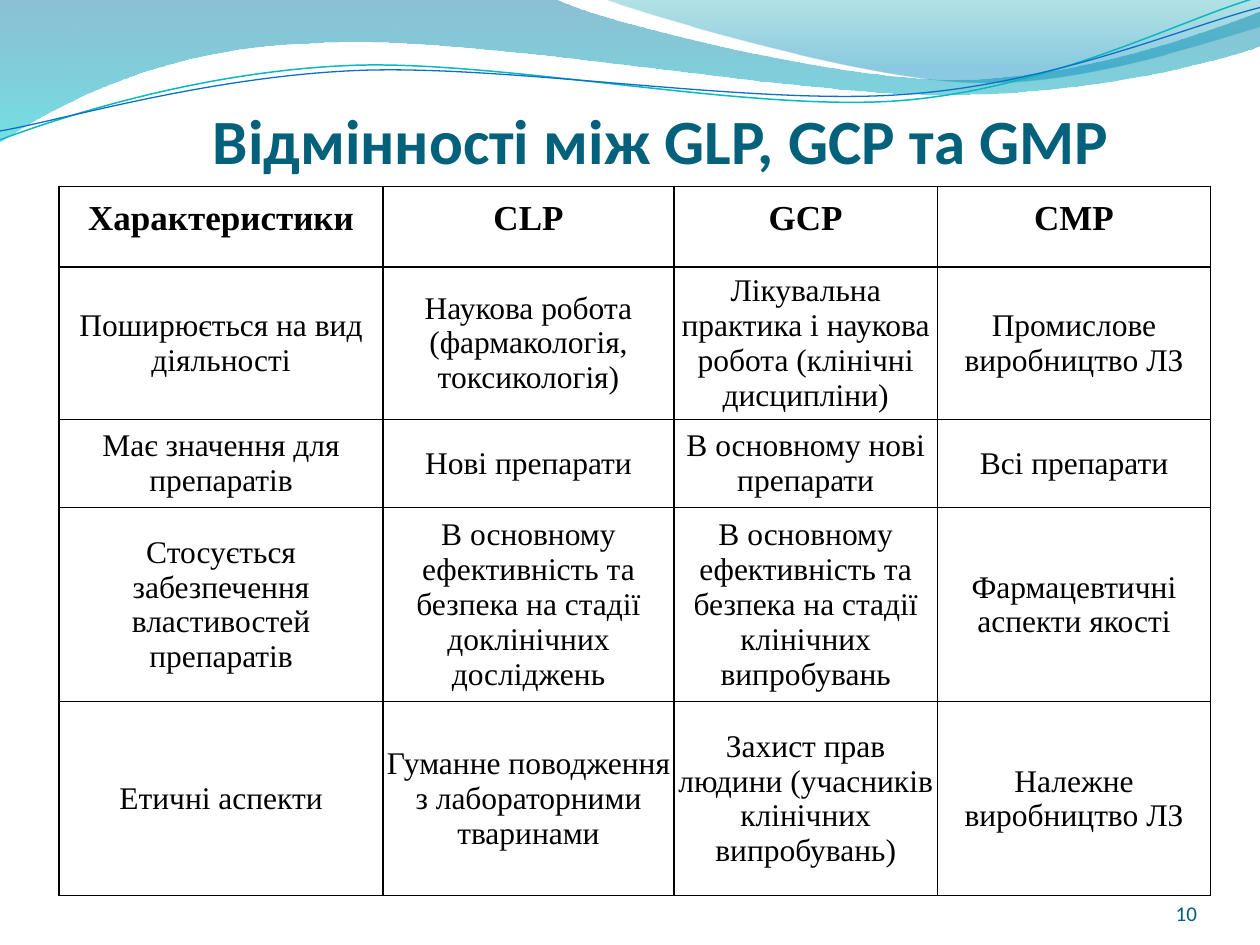
from math import cos, radians, sin

from lxml.etree import SubElement
from pptx import Presentation
from pptx.dml.color import RGBColor
from pptx.enum.text import MSO_ANCHOR, MSO_AUTO_SIZE, PP_ALIGN
from pptx.oxml import parse_xml
from pptx.oxml.ns import nsdecls, qn
from pptx.util import Inches, Pt

WHITE = RGBColor(0xFF, 0xFF, 0xFF)
BLACK = RGBColor(0, 0, 0)
TITLE = RGBColor(0x04, 0x61, 0x7B)
NUMBER = RGBColor(0x04, 0x5D, 0x75)
SEA = RGBColor(0x00, 0x74, 0xA1)
CYAN = RGBColor(0x00, 0xC6, 0xCF)
TEAL = RGBColor(0x00, 0xA1, 0xA9)
SKY = RGBColor(0x00, 0x8B, 0xBF)
AQUA = RGBColor(0x0A, 0xB8, 0xBF)
BLUE = RGBColor(0x0F, 0x6F, 0xC6)

TILT = 2.7

WAVES = [
    ([(0, 0), (4.4, -0.01),
      (4.76, 0.17, 6.64, 0.63, 7.58, 0.63), (8.53, 0.63, 9.58, 0.26, 10, 0.09),
      (10.01, 0.36),
      (9.83, 0.44, 8.7, 0.76, 7.46, 0.75), (6.22, 0.75, 3.82, 0.28, 2.57, 0.34),
      (1.29, 0.36, 0.46, 0.83, -0.01, 1.13), (0, 0)],
     [(0, SEA, 45), (1, CYAN, 55)]),
    ([(4.79, -0.01),
      (5.09, 0.11, 6.82, 0.62, 7.69, 0.65), (8.56, 0.69, 9.61, 0.32, 10, 0.21),
      (10, 0), (4.79, -0.01)],
     [(0, TEAL, 30), (0.8, SKY, 45)]),
]

LINES = [
    ([(0, 1.11), (0.48, 0.93, 1.58, 0.57, 2.77, 0.52),
      (3.95, 0.47, 5.93, 0.89, 7.13, 0.8), (8.33, 0.71, 9.38, 0.15, 9.98, -0.02)],
     (4.99, 0.57), AQUA, 0.85),
    ([(0, 1.04), (0.47, 0.96, 1.64, 0.61, 2.83, 0.56),
      (4.03, 0.51, 5.97, 0.84, 7.17, 0.75), (8.36, 0.67, 9.41, 0.21, 10, 0.06)],
     (5, 0.59), BLUE, 0.75),
]

COLS = [2.57, 2.31, 2.09, 2.17]
ROWS = [0.64, 1.21, 0.7, 1.54, 1.54]
CELLS = [
    ["Характеристики", "СLP", "GСР", "СМР"],
    ["Поширюється на вид діяльності",
     "Наукова робота (фармакологія, токсикологія)",
     "Лікувальна практика і наукова робота (клінічні дисципліни)",
     "Промислове виробництво ЛЗ"],
    ["Має значення для препаратів", "Нові препарати",
     "В основному нові препарати", "Всі препарати"],
    ["Стосується\nзабезпечення\nвластивостей\nпрепаратів",
     "В основному ефективність та безпека на стадії доклінічних досліджень",
     "В основному ефективність та безпека на стадії клінічних випробувань",
     "Фармацевтичні аспекти якості"],
    ["Етичні аспекти",
     "Гуманне поводження з лабораторними тваринами",
     "Захист прав людини (учасників клінічних випробувань)",
     "Належне виробництво ЛЗ"],
]


def write(frame, text, size=18, font="Times New Roman", color=BLACK,
          bold=False, align=PP_ALIGN.CENTER, space=None):
    frame.text = text
    frame.word_wrap = True
    for para in frame.paragraphs:
        para.alignment = align
        para.line_spacing = space
        for run in para.runs:
            run.font.size = Pt(size)
            run.font.name = font
            run.font.bold = bold
            run.font.color.rgb = color
            run._r.get_or_add_rPr().set("kern", "0")


def pairs(step):
    return list(zip(step[::2], step[1::2]))


def turn(path, center):
    a, (cx, cy) = radians(TILT), center
    return [sum(((cx + (x - cx) * cos(a) - (y - cy) * sin(a),
                  cy + (x - cx) * sin(a) + (y - cy) * cos(a))
                 for x, y in pairs(step)), ()) for step in path]


class Deck:
    def __init__(self):
        self.show = Presentation()
        self.show.slide_width = Inches(10)
        self.show.slide_height = Inches(7.5)
        self.slide = self.show.slides.add_slide(self.show.slide_layouts[5])
        self.font = "Calibri"

    def curve(self, shapes, path, close):
        first, *rest = [tuple(map(Inches, step[-2:])) for step in path]
        pen = shapes.build_freeform(*first, scale=1.0)
        pen.add_line_segments(rest, close=close)
        shape = pen.convert_to_shape()
        shape.shadow.inherit = False
        parts = list(shape._element.spPr.iter(qn("a:lnTo")))
        for part, step in zip(parts, path[1:]):
            if len(step) == 6:
                part.tag = qn("a:cubicBezTo")
                for i, (x, y) in enumerate(pairs(step)[:2]):
                    point = part.makeelement(qn("a:pt"), {
                        "x": str(Inches(x) - shape.left),
                        "y": str(Inches(y) - shape.top)})
                    part.insert(i, point)
        return shape

    def wave(self, path, stops):
        shape = self.curve(self.slide.shapes, path, True)
        shape.line.fill.background()
        shape.fill.gradient()
        shape.fill.gradient_angle = 270
        tints = shape._element.spPr.find(qn("a:gradFill")).iter(qn("a:gs"))
        for stop, tint, (place, color, alpha) in zip(
                shape.fill.gradient_stops, tints, stops):
            stop.position = place
            stop.color.rgb = color
            SubElement(tint[0], qn("a:alpha")).set("val", str(alpha * 1000))

    def lines(self):
        group = self.slide.shapes.add_group_shape()
        for path, center, color, width in LINES:
            shape = self.curve(group.shapes, turn(path, center), False)
            shape.rotation = 360 - TILT
            shape.fill.background()
            shape.line.color.rgb = color
            shape.line.width = Pt(width)

    def title(self, text):
        shape = self.slide.shapes.title
        self.slide.shapes._spTree.append(shape._element)
        shape.left, shape.top = Inches(0.5), Inches(0.6)
        shape.width, shape.height = Inches(9), Inches(0.81)
        frame = shape.text_frame
        self.inset(frame, top=0.05)
        write(frame, text, size=36, font=self.font, color=TITLE, bold=True, space=1.5)
        props = frame.paragraphs[0]._p.get_or_add_pPr()
        props.set("marL", str(Inches(0.5)))
        props.set("indent", str(Inches(-0.01)))

    def inset(self, frame, top=0):
        frame.auto_size = MSO_AUTO_SIZE.NONE
        frame.vertical_anchor = MSO_ANCHOR.BOTTOM
        frame.margin_left = frame.margin_right = frame.margin_bottom = 0
        frame.margin_top = Inches(top)

    def table(self, left, top):
        shape = self.slide.shapes.add_table(
            len(ROWS), len(COLS), Inches(left), Inches(top),
            Inches(sum(COLS)), Inches(sum(ROWS)))
        grid = shape.table
        for col, width in zip(grid.columns, COLS):
            col.width = Inches(width)
        for row, height in zip(grid.rows, ROWS):
            row.height = Inches(height)
        for r, texts in enumerate(CELLS):
            style = {} if r else {"size": 20, "bold": True, "space": Pt(12.9)}
            for c, text in enumerate(texts):
                self.cell(grid.cell(r, c), text, style)

    def cell(self, cell, text, style):
        cell.vertical_anchor = MSO_ANCHOR.MIDDLE
        cell.margin_left = cell.margin_right = Inches(0.01)
        cell.margin_top = cell.margin_bottom = 0
        cell.fill.solid()
        cell.fill.fore_color.rgb = WHITE
        write(cell.text_frame, text, **style)
        props = cell._tc.get_or_add_tcPr()
        for i, side in enumerate("LRTB"):
            props.insert(i, parse_xml(
                f'<a:ln{side} {nsdecls("a")} w="{Pt(1)}"><a:solidFill>'
                f'<a:srgbClr val="{BLACK}"/></a:solidFill></a:ln{side}>'))

    def number(self, text):
        box = self.slide.shapes.add_textbox(
            Inches(8.67), Inches(6.95), Inches(0.83), Inches(0.4))
        self.inset(box.text_frame)
        write(box.text_frame, text, size=12, font=self.font, color=NUMBER,
              align=PP_ALIGN.RIGHT)


def main():
    deck = Deck()
    for path, stops in WAVES:
        deck.wave(path, stops)
    deck.lines()
    deck.title("Відмінності між GLP, GCP та GMP")
    deck.table(0.47, 1.48)
    deck.number("10")
    deck.show.save("out.pptx")


if __name__ == "__main__":
    main()
